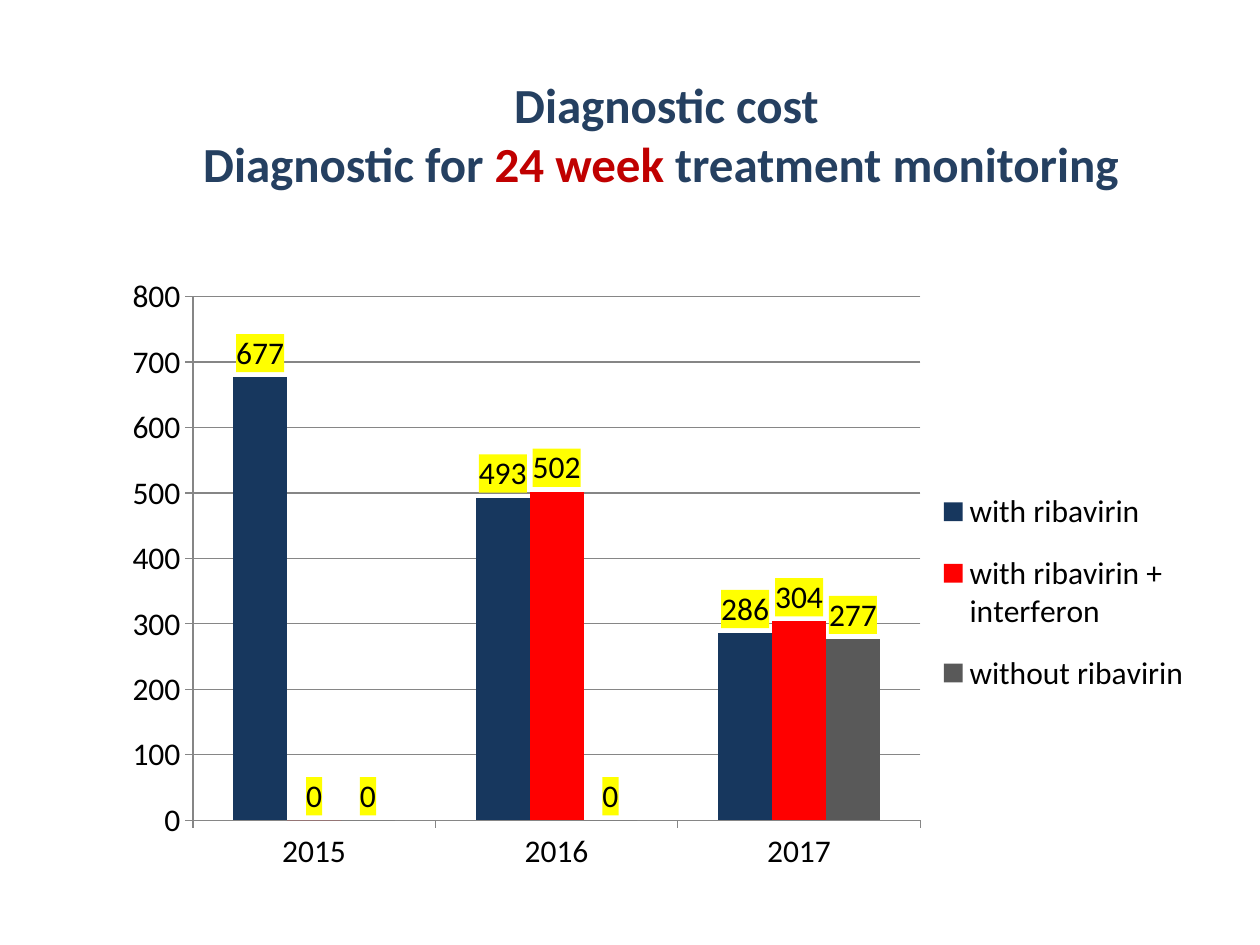
import pptx
import pptx.chart.data
import pptx.dml.color
import pptx.enum.chart
import pptx.enum.text
import pptx.oxml
import pptx.oxml.ns
import pptx.util
from pptx.util import Cm, Pt

RGBColor = pptx.dml.color.RGBColor
NAVY = RGBColor(0x25, 0x40, 0x61)
DARK_RED = RGBColor(0xC0, 0x00, 0x00)
BLACK = RGBColor(0x00, 0x00, 0x00)
AXIS_GREY = RGBColor(0x86, 0x86, 0x86)
LABEL_YELLOW = RGBColor(0xFF, 0xFF, 0x00)
FONT = "Calibri"

YEARS = ["2015", "2016", "2017"]
TREATMENTS = [
    ("with ribavirin", (677, 493, 286), RGBColor(0x17, 0x37, 0x5E)),
    ("with ribavirin + interferon", (0, 502, 304), RGBColor(0xFF, 0x00, 0x00)),
    ("without ribavirin", (0, 0, 277), RGBColor(0x59, 0x59, 0x59)),
]


def add_title(page):
    box = page.shapes.add_textbox(Cm(3.02), Cm(0.46), Cm(20.83), Cm(4.47))
    frame = box.text_frame
    frame.word_wrap = True
    frame.vertical_anchor = pptx.enum.text.MSO_ANCHOR.MIDDLE
    para = frame.paragraphs[0]
    para.alignment = pptx.enum.text.PP_ALIGN.CENTER
    para.text = "Diagnostic cost\vDiagnostic for "
    for words in ("24 week ", "treatment monitoring "):
        para.add_run().text = words
    for span in para.runs:
        span.font.name = FONT
        span.font.size = Pt(28)
        span.font.bold = True
        span.font.color.rgb = DARK_RED if "24" in span.text else NAVY


def make_layout(left, top, width, height, target=""):
    """Return a manual layout; lengths are fractions of the chart."""
    return pptx.oxml.parse_xml(
        f'<c:layout {pptx.oxml.ns.nsdecls("c")}><c:manualLayout>{target}'
        '<c:xMode val="edge"/><c:yMode val="edge"/>'
        f'<c:x val="{left}"/><c:y val="{top}"/>'
        f'<c:w val="{width}"/><c:h val="{height}"/>'
        '</c:manualLayout></c:layout>')


def remove_layout(element):
    for layout in element.findall(pptx.oxml.ns.qn("c:layout")):
        element.remove(layout)


def style_line(line):
    line.color.rgb = AXIS_GREY
    line.width = Pt(0.75)


def style_axes(chart):
    for axis in (chart.category_axis, chart.value_axis):
        style_line(axis.format.line)
        axis.major_tick_mark = pptx.enum.chart.XL_TICK_MARK.OUTSIDE
        axis.minor_tick_mark = pptx.enum.chart.XL_TICK_MARK.NONE
    values = chart.value_axis
    values.minimum_scale, values.maximum_scale = 0, 800
    values.major_unit = 100
    values.has_major_gridlines = True
    style_line(values.major_gridlines.format.line)


def style_series(series, color):
    series.format.fill.solid()
    series.format.fill.fore_color.rgb = color
    series.invert_if_negative = False
    labels = series.data_labels
    labels.show_value = True
    labels.position = pptx.enum.chart.XL_LABEL_POSITION.OUTSIDE_END
    labels.font.name = FONT
    labels.font.size = Pt(18)
    labels.font.color.rgb = BLACK
    # The label background has no public property
    background = pptx.oxml.parse_xml(
        f'<c:spPr {pptx.oxml.ns.nsdecls("c", "a")}><a:solidFill>'
        f'<a:srgbClr val="{LABEL_YELLOW}"/></a:solidFill></c:spPr>')
    labels._element.find(pptx.oxml.ns.qn("c:txPr")).addprevious(background)


def add_cost_chart(page):
    data = pptx.chart.data.CategoryChartData()
    data.categories = YEARS
    for name, costs, _ in TREATMENTS:
        data.add_series(name, costs)
    chart = page.shapes.add_chart(
        pptx.enum.chart.XL_CHART_TYPE.COLUMN_CLUSTERED,
        Cm(2.11), Cm(5.36), Cm(22.22), Cm(12.42), data).chart
    chart.has_title = False
    chart.font.name = FONT
    chart.font.size = Pt(18)
    chart.font.color.rgb = BLACK

    # Columns
    plot = chart.plots[0]
    plot.gap_width = 150
    plot.overlap = 0
    plot.vary_by_categories = False
    for series, (_, _, color) in zip(plot.series, TREATMENTS):
        style_series(series, color)
    style_axes(chart)

    # Legend on the right
    chart.has_legend = True
    legend = chart.legend
    legend.position = pptx.enum.chart.XL_LEGEND_POSITION.RIGHT
    legend.include_in_layout = False
    remove_layout(legend._element)
    legend._element.find(pptx.oxml.ns.qn("c:legendPos")).addnext(
        make_layout(0.75, 0.33, 0.24, 0.4))

    # Plot area
    area = chart._chartSpace.chart.plotArea
    remove_layout(area)
    area.insert(0, make_layout(0.08, 0.05, 0.66, 0.85,
                               '<c:layoutTarget val="inner"/>'))


def main():
    deck = pptx.Presentation()
    deck.slide_width, deck.slide_height = Cm(25.4), Cm(19.05)
    page = deck.slides.add_slide(deck.slide_layouts[6])
    add_title(page)
    add_cost_chart(page)
    deck.save("out.pptx")


if __name__ == "__main__":
    main()
